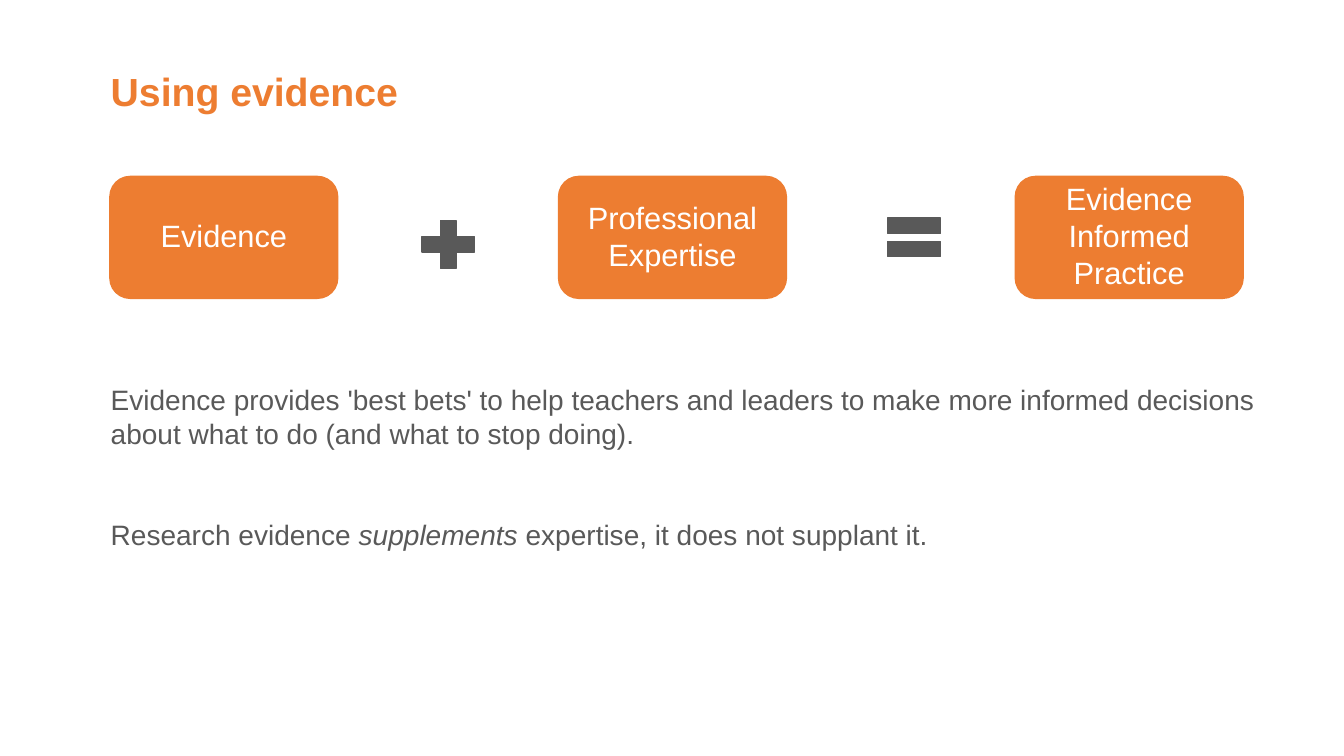
from pptx import Presentation
from pptx.dml.color import RGBColor
from pptx.enum.shapes import MSO_SHAPE
from pptx.enum.text import MSO_ANCHOR, PP_ALIGN
from pptx.util import Inches, Pt

ROUNDED = MSO_SHAPE.ROUNDED_RECTANGLE
PLUS = MSO_SHAPE.MATH_PLUS
EQUAL = MSO_SHAPE.MATH_EQUAL
MIDDLE = MSO_ANCHOR.MIDDLE
CENTER = PP_ALIGN.CENTER

COLORS = {"orange": "ED7D31", "gray": "595959", "white": "FFFFFF"}


def style_text(paragraph, size, color, bold=False):
    font = paragraph.font
    font.name = "Arial"
    font.size = Pt(size)
    font.bold = bold
    font.color.rgb = RGBColor.from_string(COLORS[color])


def add_solid_shape(kind, left, top, width, height, color):
    shape = slide.shapes.add_shape(
        kind, Inches(left), Inches(top), Inches(width), Inches(height))
    shape.shadow.inherit = False
    shape.fill.solid()
    shape.fill.fore_color.rgb = RGBColor.from_string(COLORS[color])
    shape.line.color.rgb = RGBColor.from_string(COLORS[color])
    shape.line.width = Pt(1)
    return shape


presentation = Presentation()
presentation.slide_width = Inches(13.33)
presentation.slide_height = Inches(7.5)
slide = presentation.slides.add_slide(presentation.slide_layouts[6])

# Title
title = slide.shapes.add_textbox(Inches(1), Inches(0.62), Inches(12.3), Inches(0.57))
title.text_frame.word_wrap = True
title.text_frame.text = "Using evidence"
style_text(title.text_frame.paragraphs[0], 28, "orange", bold=True)

# Equation: evidence + expertise = practice
terms = [
    (1.09, "Evidence"),
    (5.54, "Professional\nExpertise"),
    (10.07, "Evidence Informed Practice"),
]
for left, label in terms:
    box = add_solid_shape(ROUNDED, left, 1.75, 2.26, 1.21, "orange")
    frame = box.text_frame
    frame.word_wrap = True
    frame.vertical_anchor = MIDDLE
    frame.margin_top, frame.margin_bottom = Inches(0.03), Inches(0.07)
    frame.text = label
    for paragraph in frame.paragraphs:
        paragraph.alignment = CENTER
        style_text(paragraph, 22, "white")

for kind, left, top in [(PLUS, 4.09, 2.1), (EQUAL, 8.71, 2.03)]:
    add_solid_shape(kind, left, top, 0.71, 0.65, "gray")

# Explanation
body = slide.shapes.add_textbox(Inches(1), Inches(3.75), Inches(11.63), Inches(2.83))
body.text_frame.word_wrap = True
best_bets = body.text_frame.paragraphs[0]
best_bets.text = (
    "Evidence provides 'best bets' to help teachers and leaders to make more "
    "informed decisions about what to do (and what to stop doing).")
style_text(best_bets, 20, "gray")

supplement = body.text_frame.add_paragraph()
supplement.space_before = Pt(48)
style_text(supplement, 20, "gray")
for text, italic in [
    ("Research evidence ", False),
    ("supplements ", True),
    ("expertise, it does not supplant it.", False),
]:
    run = supplement.add_run()
    run.text = text
    run.font.italic = italic

presentation.save("out.pptx")
